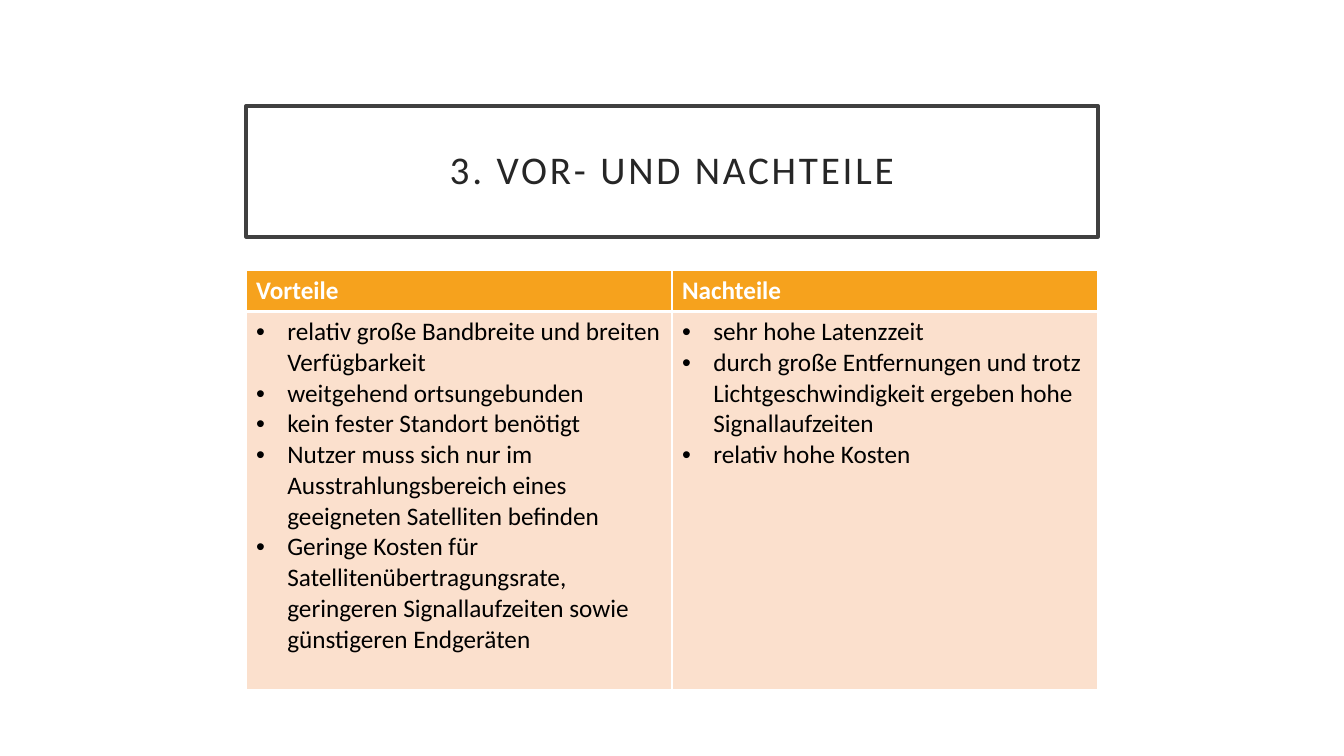
from dataclasses import dataclass

from lxml.etree import SubElement
from pptx import Presentation
from pptx.dml.color import RGBColor
from pptx.enum.shapes import MSO_SHAPE
from pptx.enum.text import MSO_ANCHOR, PP_ALIGN
from pptx.oxml.ns import qn
from pptx.util import Inches, Pt


@dataclass(frozen=True)
class Theme:
    font: str = "Calibri"
    title_size: int = 28
    table_size: int = 18
    white: str = "FFFFFF"
    frame: str = "404040"
    title_text: str = "262626"
    body_text: str = "000000"
    header_fill: str = "F6A21D"
    body_fill: str = "FBE0CD"


THEME = Theme()

# Heading and points of each column
COLUMNS = {
    "Vorteile": [
        "relativ große Bandbreite und breiten Verfügbarkeit",
        "weitgehend ortsungebunden",
        "kein fester Standort benötigt",
        "Nutzer muss sich nur im Ausstrahlungsbereich eines geeigneten Satelliten befinden",
        "Geringe Kosten für Satellitenübertragungsrate, geringeren Signallaufzeiten "
        "sowie günstigeren Endgeräten",
    ],
    "Nachteile": [
        "sehr hohe Latenzzeit",
        "durch große Entfernungen und trotz Lichtgeschwindigkeit ergeben hohe Signallaufzeiten",
        "relativ hohe Kosten",
    ],
}


def apply_format(target, values):
    for name, value in values.items():
        setattr(target, name, value)


def fill_solid(fill, color):
    fill.solid()
    fill.fore_color.rgb = RGBColor.from_string(color)


def add_span(para, text, size, color, bold=False):
    span = para.add_run()
    span.text = text
    apply_format(span.font, {"name": THEME.font, "size": Pt(size), "bold": bold})
    span.font.color.rgb = RGBColor.from_string(color)
    return span


def add_bullet(para):
    indent = Inches(0.31)
    properties = para._p.get_or_add_pPr()
    properties.set("marL", str(indent))
    properties.set("indent", str(-indent))
    SubElement(properties, qn("a:buFont")).set("typeface", "Arial")
    SubElement(properties, qn("a:buChar")).set("char", "•")


def set_borders(cell, widths):
    properties = cell._tc.get_or_add_tcPr()
    for side, width in widths.items():
        line = SubElement(properties, qn(f"a:ln{side}"), w=str(Pt(width)))
        solid = SubElement(line, qn("a:solidFill"))
        SubElement(solid, qn("a:srgbClr"), val=THEME.white)


def add_title(page, text):
    box = page.shapes.add_shape(
        MSO_SHAPE.RECTANGLE, Inches(2.44), Inches(1.05), Inches(8.45), Inches(1.3))
    box.shadow.inherit = False
    fill_solid(box.fill, THEME.white)
    fill_solid(box.line.fill, THEME.frame)
    box.line.width = Pt(2.5)
    inset = Inches(0.2)
    apply_format(box.text_frame, {
        "word_wrap": True, "vertical_anchor": MSO_ANCHOR.MIDDLE,
        "margin_left": inset, "margin_top": inset,
        "margin_right": inset, "margin_bottom": inset})
    para = box.text_frame.paragraphs[0]
    apply_format(para, {"alignment": PP_ALIGN.CENTER, "line_spacing": 0.9})
    span = add_span(para, text, THEME.title_size, THEME.title_text)
    span._r.get_or_add_rPr().set("spc", "200")


def fill_cell(cell, texts, fill, color, bottom=1, bold=False, bullets=False):
    set_borders(cell, {"L": 1, "R": 1, "T": 1, "B": bottom})
    fill_solid(cell.fill, fill)
    frame = cell.text_frame
    for index, text in enumerate(texts):
        para = frame.add_paragraph() if index else frame.paragraphs[0]
        if bullets:
            add_bullet(para)
        add_span(para, text, THEME.table_size, color, bold)


def add_comparison(page, columns):
    heights = [Inches(0.41), Inches(3.75)]
    table = page.shapes.add_table(
        len(heights), len(columns), Inches(2.44), Inches(2.68),
        Inches(8.45), sum(heights)).table
    table.horz_banding = False
    for row, height in zip(table.rows, heights):
        row.height = height
    for index, (heading, points) in enumerate(columns.items()):
        fill_cell(table.cell(0, index), [heading], THEME.header_fill, THEME.white,
                  bottom=3, bold=True)
        body = table.cell(1, index)
        set_top = {"bullets": True}
        fill_cell(body, points, THEME.body_fill, THEME.body_text, **set_top)


def main():
    deck = Presentation()
    apply_format(deck, {"slide_width": Inches(13.33), "slide_height": Inches(7.5)})
    page = deck.slides.add_slide(deck.slide_layouts[6])
    fill_solid(page.background.fill, THEME.white)

    # Framed title
    add_title(page, "3. VOR- UND NACHTEILE")

    # Advantages beside disadvantages
    add_comparison(page, COLUMNS)

    deck.save("out.pptx")


if __name__ == "__main__":
    main()
